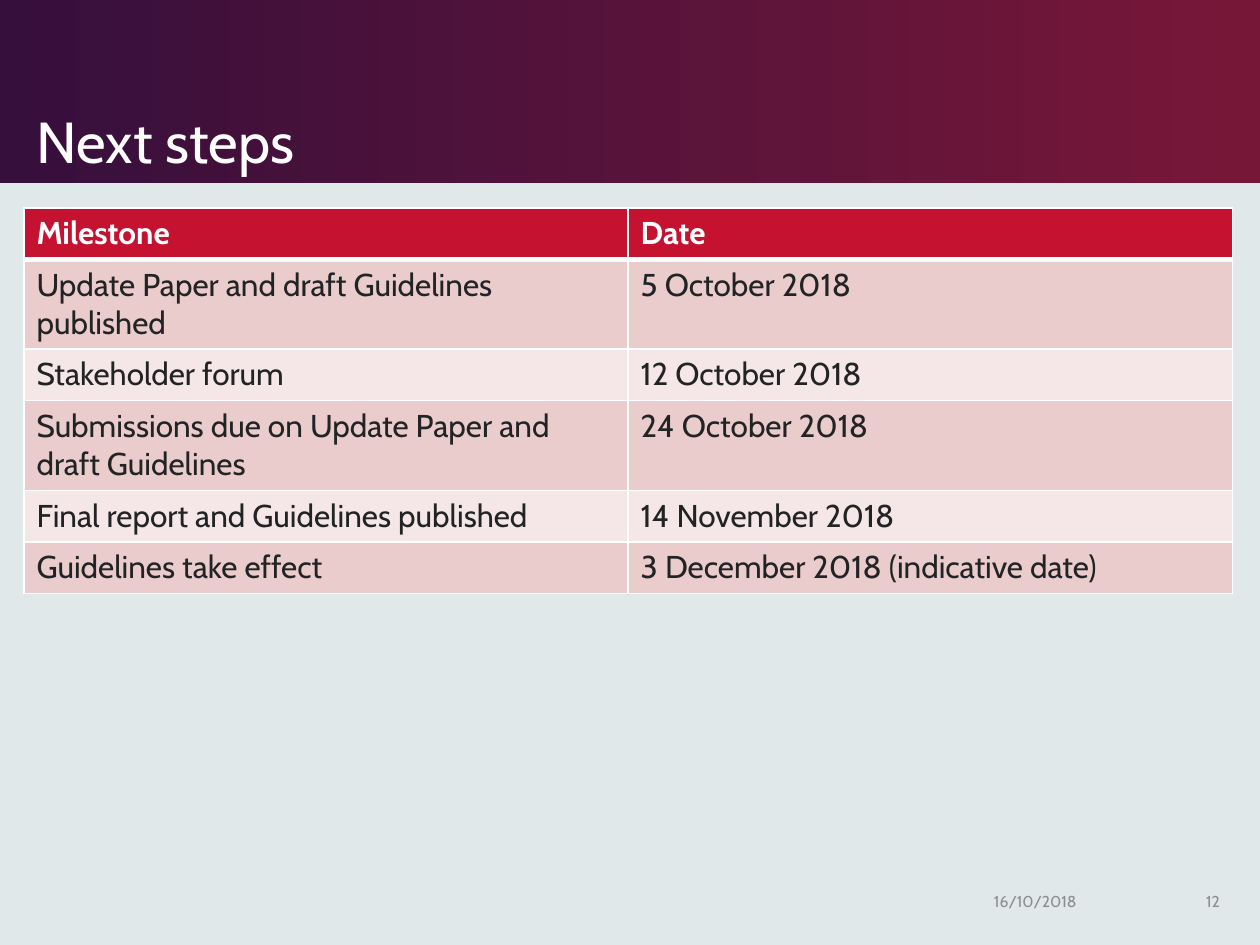
from lxml.etree import SubElement
from pptx import Presentation
from pptx.dml.color import RGBColor
from pptx.enum.shapes import MSO_SHAPE
from pptx.enum.text import MSO_ANCHOR, MSO_AUTO_SIZE, PP_ALIGN
from pptx.oxml.ns import qn
from pptx.util import Inches, Pt

FONT = "Cabin"
COLORS = {
    "page": "E0E8EA",
    "band_start": "360F3C",
    "band_end": "771738",
    "white": "FFFFFF",
    "header": "C41230",
    "odd_row": "EACCCD",
    "even_row": "F5E7E8",
    "body": "222324",
    "footer": "8D8D8E",
}
MILESTONES = [
    ("Milestone", "Date"),
    ("Update Paper and draft Guidelines published", "5 October 2018"),
    ("Stakeholder forum", "12 October 2018"),
    ("Submissions due on Update Paper and draft Guidelines", "24 October 2018"),
    ("Final report and Guidelines published", "14 November 2018"),
    ("Guidelines take effect", "3 December 2018 (indicative date)"),
]


def color(name):
    return RGBColor.from_string(COLORS[name])


def write(frame, text, size, color_name, bold=False, align=PP_ALIGN.LEFT):
    frame.text = text
    para = frame.paragraphs[0]
    para.alignment = align
    font = para.runs[0].font
    font.name, font.size, font.bold = FONT, Pt(size), bold
    font.color.rgb = color(color_name)


def add_band(page):
    band = page.shapes.add_shape(MSO_SHAPE.RECTANGLE, 0, 0, Inches(10), Inches(1.45))
    band.shadow.inherit = False
    band.line.fill.background()
    band.fill.gradient()
    band.fill.gradient_angle = 0
    stops = band.fill.gradient_stops
    for stop, position, name in zip(stops, (0, 0.99), ("band_start", "band_end")):
        stop.position = position
        stop.color.rgb = color(name)
    # Send the band behind the title
    page.shapes._spTree.insert(2, band._element)


def set_title(page, text):
    title = page.shapes.title
    title.left, title.top = Inches(0.19), Inches(0.15)
    title.width, title.height = Inches(7.38), Inches(1.3)
    frame = title.text_frame
    frame.auto_size = MSO_AUTO_SIZE.NONE
    frame.vertical_anchor = MSO_ANCHOR.BOTTOM
    write(frame, text, 33, "white")
    frame.paragraphs[0].line_spacing = 0.9


def add_footer(page, text, left, width, align):
    box = page.shapes.add_textbox(Inches(left), Inches(6.95), Inches(width), Inches(0.4))
    box.text_frame.word_wrap = True
    box.text_frame.vertical_anchor = MSO_ANCHOR.MIDDLE
    write(box.text_frame, text, 9, "footer", align=align)


def set_borders(cell, top, bottom):
    properties = cell._tc.get_or_add_tcPr()
    widths = {"a:lnL": 1, "a:lnR": 1, "a:lnT": top, "a:lnB": bottom}
    for index, (tag, width) in enumerate(widths.items()):
        line = SubElement(properties, qn(tag), w=str(Pt(width)))
        fill = SubElement(line, qn("a:solidFill"))
        SubElement(fill, qn("a:srgbClr"), val=COLORS["white"])
        # Borders come before the cell fill
        properties.insert(index, line)


def add_milestone_table(page, rows):
    frame = page.shapes.add_table(
        len(rows), 2, Inches(0.19), Inches(1.65), Inches(9.59), Inches(0.41 * len(rows))
    )
    table = frame.table
    for row, texts in enumerate(rows):
        is_header = row == 0
        fill_name = "header" if is_header else ("even_row", "odd_row")[row % 2]
        for column, text in enumerate(texts):
            cell = table.cell(row, column)
            write(cell.text_frame, text, 18, "white" if is_header else "body", is_header)
            cell.fill.solid()
            cell.fill.fore_color.rgb = color(fill_name)
            set_borders(cell, top=3 if row == 1 else 1, bottom=3 if is_header else 1)


def main():
    deck = Presentation()
    deck.slide_width, deck.slide_height = Inches(10), Inches(7.5)
    page = deck.slides.add_slide(deck.slide_layouts[5])
    page.background.fill.solid()
    page.background.fill.fore_color.rgb = color("page")

    # Heading
    add_band(page)
    set_title(page, "Next steps")

    # Schedule
    add_milestone_table(page, MILESTONES)

    # Date and page number
    add_footer(page, "16/10/2018", 7.79, 1.42, PP_ALIGN.LEFT)
    add_footer(page, "12", 9.31, 0.47, PP_ALIGN.RIGHT)

    deck.save("out.pptx")


if __name__ == "__main__":
    main()
